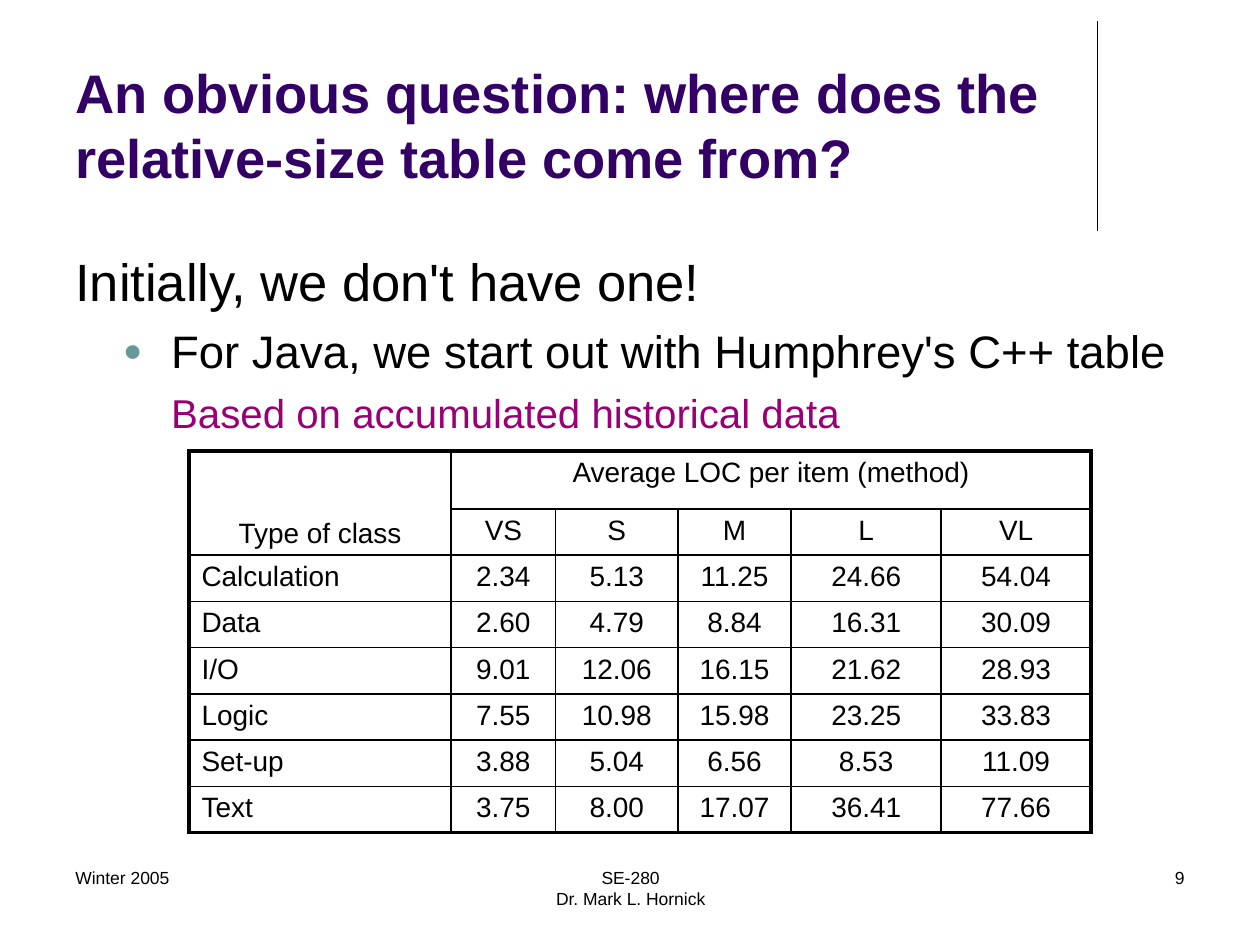
from lxml import etree
from pptx import Presentation, util as u
from pptx.dml.color import RGBColor
from pptx.enum import shapes, text
from pptx.oxml import ns

ALIGN = text.PP_ALIGN
ANCHOR = text.MSO_ANCHOR
BLACK = "000000"
TITLE = "An obvious question: where does the relative-size table come from?"
BODY = [
    {"words": "Initially, we don't have one!", "size": 30, "margin": 0.38, "indent": -0.38},
    {"words": "For Java, we start out with Humphrey's C++ table", "size": 26,
     "margin": 0.76, "indent": -0.38, "before": 6, "bullet": "669999"},
    {"words": "Based on accumulated historical data", "size": 23, "color": "9A0075",
     "margin": 1.08, "indent": -0.32, "before": 6},
]
SIZE_TABLE = [
    ["Type of class", "Average LOC per item (method)", "", "", "", ""],
    ["", "VS", "S", "M", "L", "VL"],
    ["Calculation", "2.34", "5.13", "11.25", "24.66", "54.04"],
    ["Data", "2.60", "4.79", "8.84", "16.31", "30.09"],
    ["I/O", "9.01", "12.06", "16.15", "21.62", "28.93"],
    ["Logic", "7.55", "10.98", "15.98", "23.25", "33.83"],
    ["Set-up", "3.88", "5.04", "6.56", "8.53", "11.09"],
    ["Text", "3.75", "8.00", "17.07", "36.41", "77.66"],
]
COLUMN_WIDTHS = [2.08, 0.83, 0.97, 0.9, 1.19, 1.19]
ROW_HEIGHTS = [0.46] + [0.36] * 7
HEADER_MERGES = [((0, 0), (1, 0)), ((0, 1), (0, 5))]


def rgb(value):
    return RGBColor.from_string(value)


class SlideBuilder:
    """Holds the text style and the current slide, and adds elements to it."""

    font = "Arial"
    inner_line = 1
    outer_line = 2.25

    def __init__(self, slide):
        self.slide = slide

    def format(self, paragraph, size, color=BLACK, bold=False, align=ALIGN.LEFT):
        paragraph.alignment = align
        for run in paragraph.runs:
            run.font.name = self.font
            run.font.size = u.Pt(size)
            run.font.bold = bold
            run.font.color.rgb = rgb(color)

    def text_box(self, left, top, width, height, anchor=ANCHOR.TOP):
        box = self.slide.shapes.add_textbox(*map(u.Inches, (left, top, width, height)))
        box.text_frame.word_wrap = True
        box.text_frame.vertical_anchor = anchor
        return box.text_frame

    def label(self, place, words, size, anchor=ANCHOR.TOP, **style):
        frame = self.text_box(*place, anchor=anchor)
        frame.text = words
        self.format(frame.paragraphs[0], size, **style)

    def outline(self, place, items):
        frame = self.text_box(*place)
        frame.margin_top = u.Inches(0.1)
        for number, item in enumerate(items):
            paragraph = frame.add_paragraph() if number else frame.paragraphs[0]
            paragraph.text = item["words"]
            if "before" in item:
                paragraph.space_before = u.Pt(item["before"])
            properties = paragraph._p.get_or_add_pPr()
            properties.set("marL", str(u.Inches(item["margin"])))
            properties.set("indent", str(u.Inches(item["indent"])))
            if "bullet" in item:
                self.bullet(properties, item["bullet"])
            self.format(paragraph, item["size"], item.get("color", BLACK))

    def bullet(self, properties, color):
        holder = etree.SubElement(properties, ns.qn("a:buClr"))
        etree.SubElement(holder, ns.qn("a:srgbClr"), val=color)
        etree.SubElement(properties, ns.qn("a:buSzPct"), val="70000")
        etree.SubElement(properties, ns.qn("a:buFont"), typeface=self.font)
        etree.SubElement(properties, ns.qn("a:buChar"), char="●")

    def line(self, start, end, width):
        points = map(u.Inches, (*start, *end))
        connector = self.slide.shapes.add_connector(shapes.MSO_CONNECTOR.STRAIGHT, *points)
        connector.line.color.rgb = rgb(BLACK)
        connector.line.width = u.Pt(width)
        etree.SubElement(connector._element.spPr, ns.qn("a:effectLst"))

    def borders(self, cell, outer_sides):
        properties = cell._tc.get_or_add_tcPr()
        for position, side in enumerate("LRTB"):
            width = self.outer_line if side in outer_sides else self.inner_line
            border = etree.Element(ns.qn(f"a:ln{side}"), w=str(u.Pt(width)))
            fill = etree.SubElement(border, ns.qn("a:solidFill"))
            etree.SubElement(fill, ns.qn("a:srgbClr"), val=BLACK)
            properties.insert(position, border)

    def table(self, left, top, rows, widths, heights, merges, size):
        place = map(u.Inches, (left, top, sum(widths), sum(heights)))
        table = self.slide.shapes.add_table(len(rows), len(widths), *place).table
        table.first_row = table.horz_banding = False
        for column, width in zip(table.columns, widths):
            column.width = u.Inches(width)
        for row, height in zip(table.rows, heights):
            row.height = u.Inches(height)
        for first, last in merges:
            table.cell(*first).merge(table.cell(*last))
        for r, row in enumerate(rows):
            for c, words in enumerate(row):
                cell = table.cell(r, c)
                cell.text_frame.text = words
                cell.fill.background()
                cell.vertical_anchor = ANCHOR.BOTTOM if cell.span_height > 1 else ANCHOR.TOP
                align = ALIGN.LEFT if c == 0 and r > 1 else ALIGN.CENTER
                self.format(cell.text_frame.paragraphs[0], size, align=align)
                edges = {"L": c == 0, "R": c + cell.span_width == len(widths),
                         "T": r == 0, "B": r + cell.span_height == len(rows)}
                self.borders(cell, [side for side, outer in edges.items() if outer])


def main():
    presentation = Presentation()
    presentation.slide_width = u.Inches(10)
    presentation.slide_height = u.Inches(7.5)
    builder = SlideBuilder(presentation.slides.add_slide(presentation.slide_layouts[6]))
    builder.line((8.71, 0.17), (8.71, 1.83), 0.75)
    builder.label((0.5, 6.83, 2.33, 0.5), "Winter 2005", 10)
    builder.label((3.42, 6.83, 3.17, 0.5), "SE-280\vDr. Mark L. Hornick", 10, align=ALIGN.CENTER)
    builder.label((7.17, 6.83, 2.33, 0.5), "9", 10, align=ALIGN.RIGHT)
    builder.label((0.5, 0.13, 8.25, 1.42), TITLE, 31, ANCHOR.BOTTOM, color="330066", bold=True)
    builder.outline((0.5, 1.88, 9, 4.82), BODY)
    builder.table(1.5, 3.58, SIZE_TABLE, COLUMN_WIDTHS, ROW_HEIGHTS, HEADER_MERGES, 16)
    presentation.save("out.pptx")


if __name__ == "__main__":
    main()
